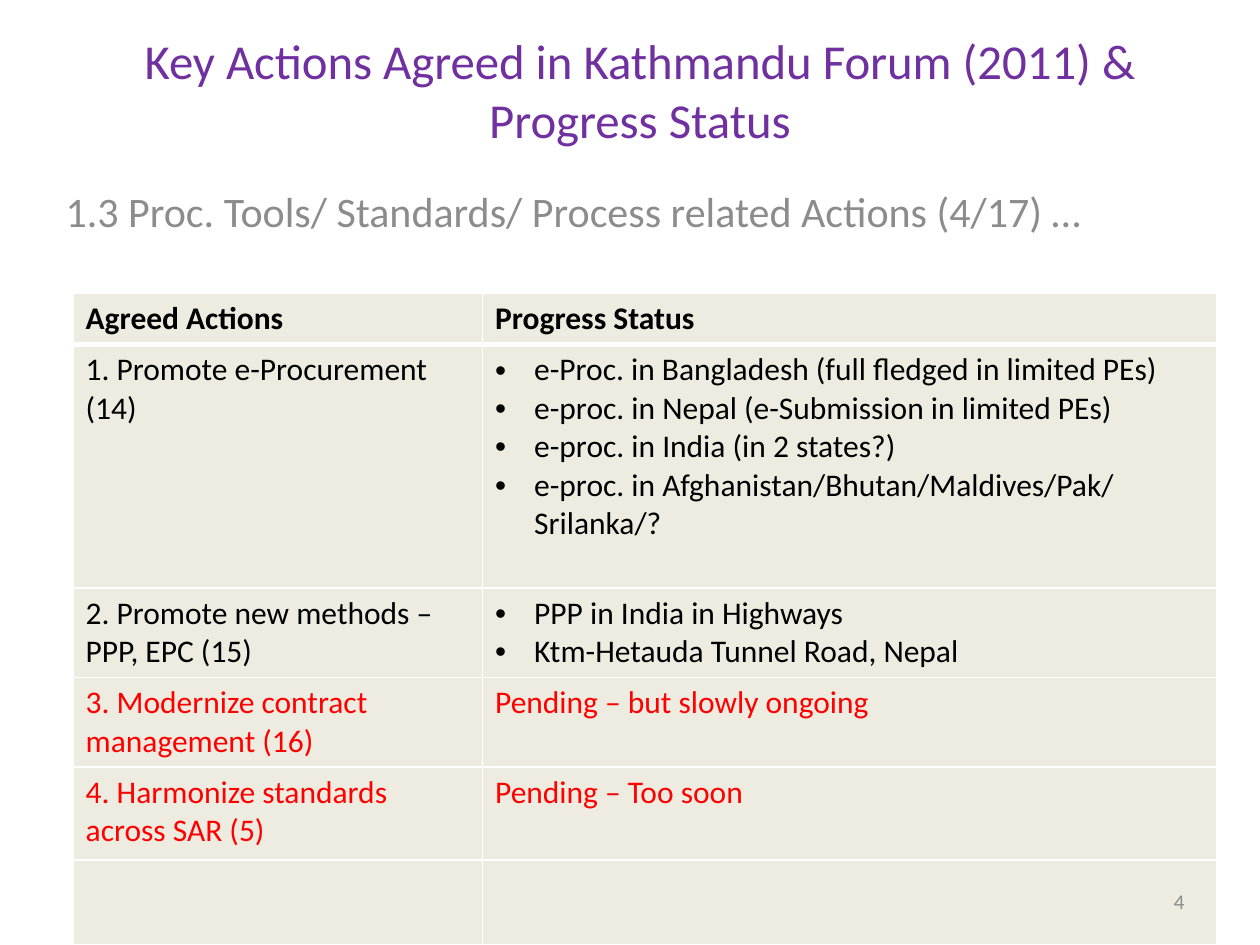
from lxml import etree
from pptx import Presentation
from pptx.dml.color import RGBColor
from pptx.enum.text import MSO_ANCHOR, MSO_AUTO_SIZE, PP_ALIGN
from pptx.oxml.ns import qn
from pptx.util import Inches, Pt

MID, TOP = MSO_ANCHOR.MIDDLE, MSO_ANCHOR.TOP
LEFT, MID_X, RIGHT = PP_ALIGN.LEFT, PP_ALIGN.CENTER, PP_ALIGN.RIGHT
FIXED = MSO_AUTO_SIZE.NONE
FONT = "Calibri"
HUES = {"title": "7030A0", "grey": "8C8C8C", "ink": "000000",
        "open": "FF0000", "cell": "EEECE1", "rule": "FFFFFF"}

COLS = [3.25, 5.83]
ROWS = [0.4, 1.93, 0.71, 0.71, 0.74, 0.67]
# Each row: colour, action, status (a list of points or a plain line)
CELLS = [
    ("ink", "Agreed Actions", "Progress Status"),
    ("ink", "1. Promote e-Procurement (14)", [
        "e-Proc. in Bangladesh (full fledged in limited PEs)",
        "e-proc. in Nepal (e-Submission in limited PEs)",
        "e-proc. in India (in 2 states?)",
        "e-proc. in Afghanistan/Bhutan/Maldives/Pak/ Srilanka/?"]),
    ("ink", "2. Promote new methods – PPP, EPC (15)", [
        "PPP in India in Highways",
        "Ktm-Hetauda Tunnel Road, Nepal"]),
    ("open", "3. Modernize contract management (16)",
     "Pending – but slowly ongoing"),
    ("open", "4. Harmonize standards across SAR (5)", "Pending – Too soon"),
    ("ink", "", ""),
]


class Deck:
    def __init__(self):
        self.prs = Presentation()
        self.prs.slide_width = Inches(10)
        self.prs.slide_height = Inches(7.5)
        self.slide = self.prs.slides.add_slide(self.prs.slide_layouts[0])

    def run(self, para, text, size, hue, bold=False):
        run = para.add_run()
        run.text = text
        run.font.name = FONT
        run.font.size = Pt(size)
        run.font.bold = bold
        run.font.color.rgb = RGBColor.from_string(HUES[hue])

    def fill_text(self, shape, box, text, size, hue, align, anchor):
        shape.left, shape.top, shape.width, shape.height = map(Inches, box)
        frame = shape.text_frame
        frame.word_wrap = True
        frame.auto_size = FIXED
        frame.vertical_anchor = anchor
        para = frame.paragraphs[0]
        para.alignment = align
        para.space_before = Pt(0)
        self.run(para, text, size, hue)

    def holder(self, idx, *args):
        self.fill_text(self.slide.placeholders[idx], *args)

    def label(self, box, *args):
        shape = self.slide.shapes.add_textbox(*map(Inches, box))
        self.fill_text(shape, box, *args)

    def bullet(self, para):
        props = para._p.get_or_add_pPr()
        props.set("marL", str(Inches(0.31)))
        props.set("indent", str(-Inches(0.31)))
        etree.SubElement(props, qn("a:buFont"), typeface="Arial")
        etree.SubElement(props, qn("a:buChar"), char="•")

    def edges(self, cell, row):
        props = cell._tc.get_or_add_tcPr()
        wide = {"T": row == 1, "B": row == 0}
        for spot, side in enumerate("LRTB"):
            line = etree.Element(qn("a:ln" + side))
            line.set("w", str(Pt(3 if wide.get(side) else 1)))
            fill = etree.SubElement(line, qn("a:solidFill"))
            etree.SubElement(fill, qn("a:srgbClr"), val=HUES["rule"])
            props.insert(spot, line)

    def cell(self, cell, row, text, hue):
        cell.fill.solid()
        cell.fill.fore_color.rgb = RGBColor.from_string(HUES["cell"])
        self.edges(cell, row)
        frame = cell.text_frame
        listed = isinstance(text, list)
        for num, line in enumerate(text if listed else [text]):
            para = frame.add_paragraph() if num else frame.paragraphs[0]
            if listed:
                self.bullet(para)
            if line:
                self.run(para, line, 18, hue, bold=row == 0)

    def table(self, left, top, cols, rows, cells):
        table = self.slide.shapes.add_table(
            len(rows), len(cols), Inches(left), Inches(top),
            Inches(sum(cols)), Inches(sum(rows))).table
        for col, width in zip(table.columns, cols):
            col.width = Inches(width)
        for num, (hue, *texts) in enumerate(cells):
            table.rows[num].height = Inches(rows[num])
            for col, text in enumerate(texts):
                self.cell(table.cell(num, col), num, text, hue)


def main():
    deck = Deck()
    # Title and subtitle
    deck.holder(0, (0.83, 0.25, 8.5, 0.92),
                "Key Actions Agreed in Kathmandu Forum (2011) & Progress Status",
                27.9, "title", MID_X, MID)
    deck.holder(1, (0.42, 1.42, 9.33, 5.83),
                "1.3 Proc. Tools/ Standards/ Process related Actions (4/17) …",
                24, "grey", LEFT, TOP)
    # Actions and their status
    deck.table(0.58, 2.33, COLS, ROWS, CELLS)
    # Page number
    deck.label((7.17, 6.95, 2.33, 0.4), "4", 12, "grey", RIGHT, MID)
    deck.prs.save("out.pptx")


if __name__ == "__main__":
    main()
